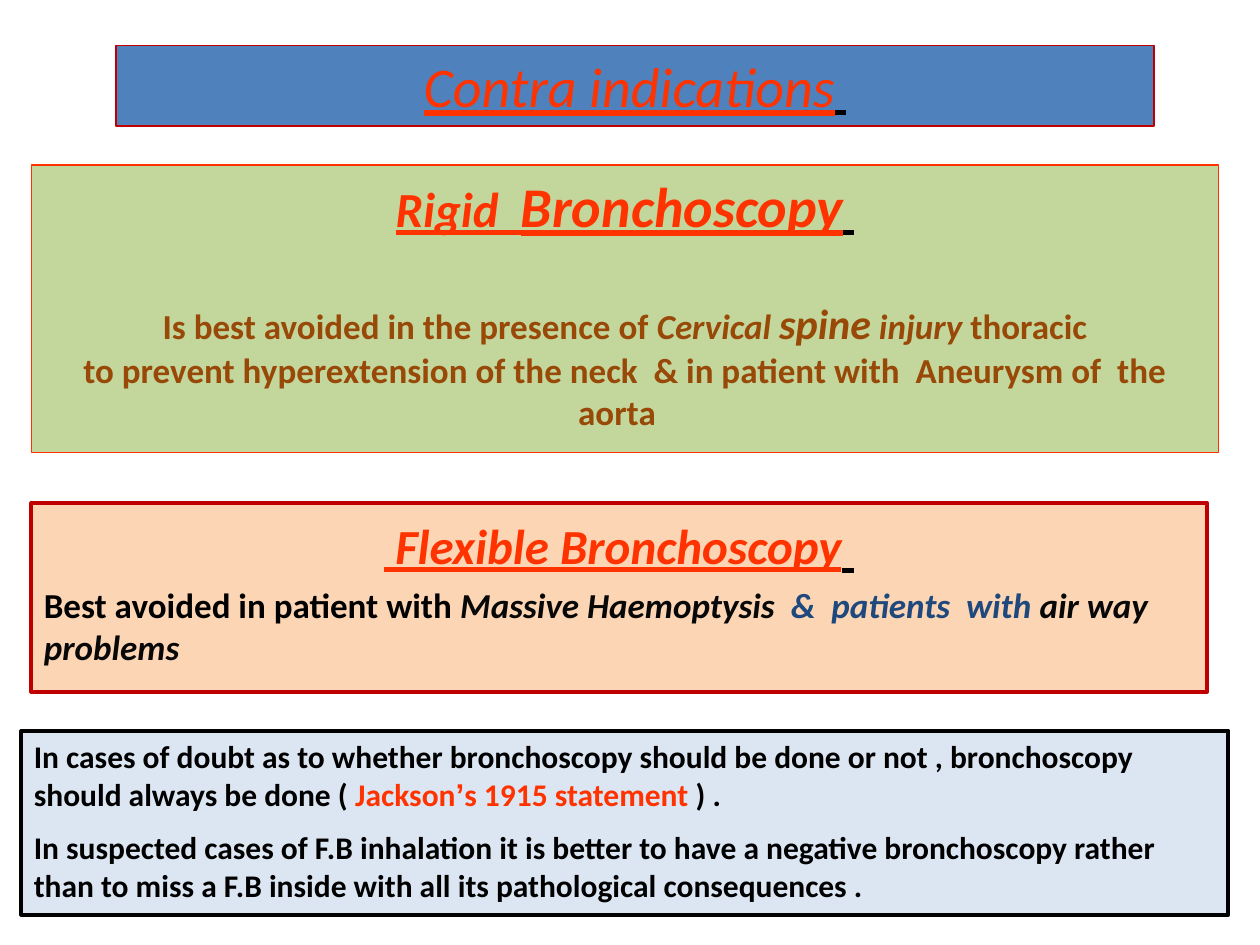
from dataclasses import dataclass

from pptx import Presentation
from pptx.dml.color import RGBColor
from pptx.enum.shapes import MSO_SHAPE
from pptx.enum.text import MSO_ANCHOR, MSO_AUTO_SIZE, PP_ALIGN
from pptx.util import Inches, Pt

RECTANGLE = MSO_SHAPE.RECTANGLE
TOP = MSO_ANCHOR.TOP
GROW, FIXED = MSO_AUTO_SIZE.SHAPE_TO_FIT_TEXT, MSO_AUTO_SIZE.NONE
LEFT, CENTER = PP_ALIGN.LEFT, PP_ALIGN.CENTER
BLANK_LAYOUT = 6


@dataclass(frozen=True)
class Theme:
    font: str = "Calibri"
    quote_font: str = "Arial"
    red: str = "FF3300"
    dark_red: str = "C00000"
    brown: str = "984807"
    navy: str = "1F497D"
    black: str = "000000"
    soft_black: str = "080808"
    blue: str = "4F81BD"
    green: str = "C3D69B"
    peach: str = "FCD5B5"
    pale_blue: str = "DCE6F2"
    title: int = 32
    heading: int = 28
    accent: int = 24
    body: int = 20
    note: int = 18
    thin: float = 0.75
    thick: float = 2.25


@dataclass(frozen=True)
class Span:
    text: str
    size: int
    color: str
    bold: bool = True
    italic: bool = False
    underline: bool = False
    font: str = Theme.font


class SlideBuilder:
    def __init__(self, slide, theme):
        self.slide = slide
        self.theme = theme

    def panel(self, left, top, width, height, fill, line, weight, auto_size=FIXED):
        box = self.slide.shapes.add_shape(
            RECTANGLE, Inches(left), Inches(top), Inches(width), Inches(height))
        box.shadow.inherit = False
        box.fill.solid()
        box.fill.fore_color.rgb = RGBColor.from_string(fill)
        box.line.color.rgb = RGBColor.from_string(line)
        box.line.width = Pt(weight)
        frame = box.text_frame
        frame.word_wrap = True
        frame.auto_size = auto_size
        frame.vertical_anchor = TOP
        return frame

    def paragraph(self, frame, spans, align=LEFT, space_before=0):
        """Fill the frame's empty first paragraph, or append a new one."""
        first = frame.paragraphs[0]
        para = frame.add_paragraph() if first.runs else first
        para.alignment = align
        para.space_before = Pt(space_before)
        for span in spans:
            for number, line in enumerate(span.text.split("\n")):
                if number:
                    para.add_line_break()
                self.run(para, line, span)

    def run(self, para, text, span):
        run = para.add_run()
        run.text = text
        font = run.font
        font.name = span.font
        font.size = Pt(span.size)
        font.bold = span.bold
        font.italic = span.italic
        font.underline = span.underline
        font.color.rgb = RGBColor.from_string(span.color)

    def heading(self, frame, *parts, bold=True):
        """Add a centred, italic, underlined line of (text, size, color) parts."""
        spans = [Span(*part, bold=bold, italic=True, underline=True) for part in parts]
        self.paragraph(frame, spans, CENTER)


def add_rigid_panel(builder):
    theme = builder.theme
    frame = builder.panel(0.25, 1.31, 9.42, 2.28, theme.green, theme.red, theme.thin)
    builder.heading(frame,
                    ("Rigid  ", theme.heading, theme.red),
                    ("Bronchoscopy", theme.title, theme.red),
                    (" ", theme.heading, theme.black))
    builder.paragraph(frame, [
        Span("Is best avoided in the presence of ", theme.body, theme.brown),
        Span("Cervical ", theme.body, theme.brown, italic=True),
        Span("spine", theme.accent, theme.brown, italic=True),
        Span(" injury ", theme.body, theme.brown, italic=True),
        Span("thoracic\nto prevent hyperextension of the neck  & in patient with"
             "  Aneurysm of  the aorta  ", theme.body, theme.brown),
    ], CENTER, space_before=34)


def add_flexible_panel(builder):
    theme = builder.theme
    frame = builder.panel(0.25, 3.99, 9.33, 1.5, theme.peach, theme.dark_red, theme.thick)
    builder.heading(frame,
                    (" ", theme.heading, theme.red),
                    ("Flexible Bronchoscopy", theme.heading, theme.red),
                    (" ", theme.title, theme.black))
    builder.paragraph(frame, [
        Span("Best avoided in patient with ", theme.body, theme.black),
        Span("Massive Haemoptysis  ", theme.body, theme.soft_black, italic=True),
        Span("&  patients  with ", theme.body, theme.navy, italic=True),
        Span("air way problems", theme.body, theme.soft_black, italic=True),
    ], space_before=4)


def add_title(builder):
    theme = builder.theme
    frame = builder.panel(0.92, 0.36, 8.24, 0.64, theme.blue, theme.dark_red,
                          theme.thin, GROW)
    builder.heading(frame,
                    ("Contra indications", theme.title, theme.red),
                    (" ", theme.heading, theme.black), bold=False)


def add_statement_panel(builder):
    theme = builder.theme
    frame = builder.panel(0.17, 5.8, 9.58, 1.46, theme.pale_blue, theme.black,
                          theme.thick, GROW)
    builder.paragraph(frame, [
        Span("In cases of doubt as to whether bronchoscopy should be done or not , "
             "bronchoscopy should always be done ( ", theme.note, theme.black),
        Span("Jackson", theme.note, theme.red),
        Span("’", theme.note, theme.red, font=theme.quote_font),
        Span("s 1915 statement", theme.note, theme.red),
        Span(" ) .", theme.note, theme.black),
    ])
    builder.paragraph(frame, [
        Span("In suspected cases of F.B inhalation it is better to have a negative "
             "bronchoscopy rather than to miss a F.B inside with all its pathological "
             "consequences .", theme.note, theme.black),
    ], space_before=9)


def main():
    deck = Presentation()
    deck.slide_width, deck.slide_height = Inches(10), Inches(7.5)
    page = deck.slides.add_slide(deck.slide_layouts[BLANK_LAYOUT])
    builder = SlideBuilder(page, Theme())
    add_rigid_panel(builder)
    add_flexible_panel(builder)
    add_title(builder)
    add_statement_panel(builder)
    deck.save("out.pptx")


if __name__ == "__main__":
    main()
